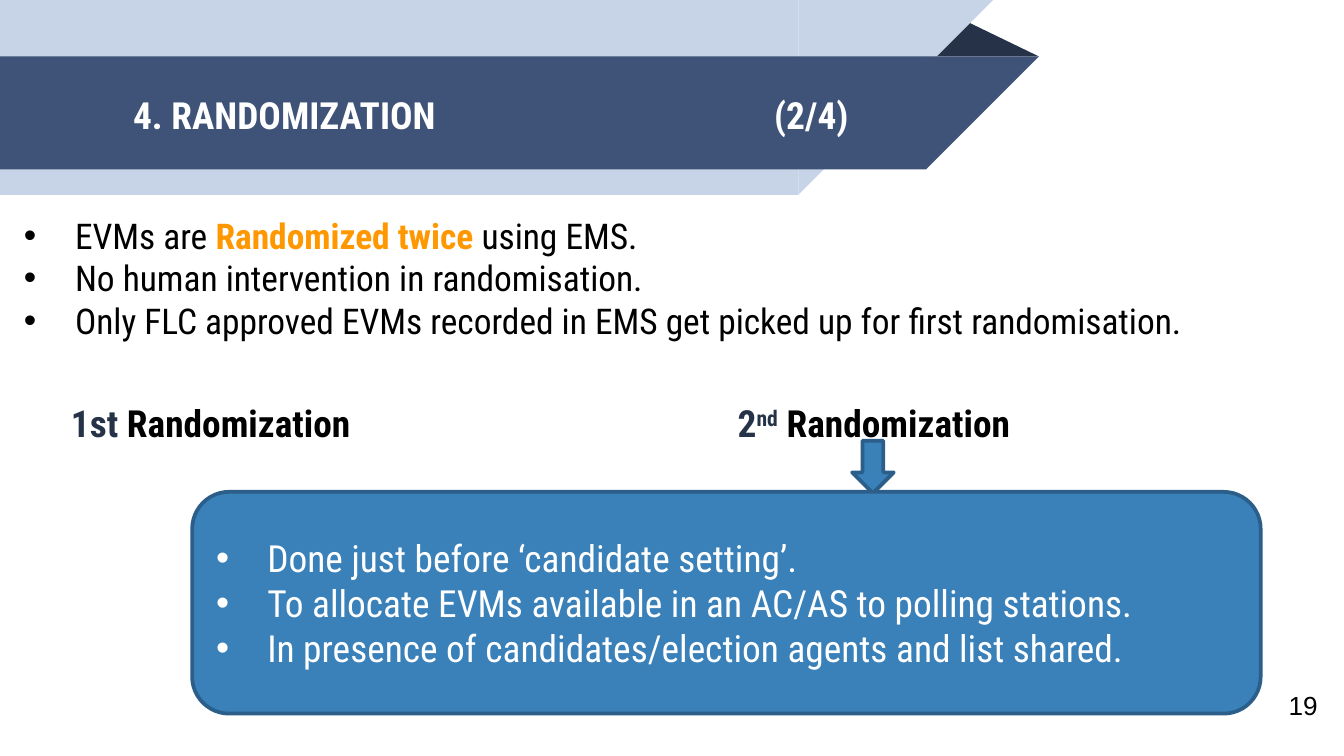
"""Build the second randomization slide with its banner, bullets and callout."""
from dataclasses import dataclass
from typing import Optional

from lxml import etree
from pptx import Presentation
from pptx import util as u
from pptx.dml.color import RGBColor
from pptx.enum import shapes, text
from pptx.oxml.ns import qn

SHAPE = shapes.MSO_SHAPE
ANCHOR = text.MSO_ANCHOR
FONT = "Roboto Condensed"
WHITE, BLACK, NAVY = "FFFFFF", "000000", "263248"
PALE, SLATE, BLUE, EDGE, ORANGE = "C7D3E6", "3F5378", "3A81BA", "2B5F8A", "FF9800"


@dataclass(frozen=True)
class Box:
    """Position and size in inches."""
    x: float
    y: float
    w: float
    h: float

    def emu(self) -> list:
        """Return the four lengths."""
        return [u.Inches(v) for v in (self.x, self.y, self.w, self.h)]


@dataclass(frozen=True)
class Run:
    """Text with its character format."""
    text: str
    color: str = BLACK
    size: float = 20
    bold: bool = False
    font: str = FONT
    raised: bool = False


@dataclass(frozen=True)
class Figure:
    """A filled preset shape."""
    kind: SHAPE
    box: Box
    fill: str
    line: Optional[str] = None
    rotation: float = 0


@dataclass(frozen=True)
class Band:
    """A banner strip that ends in a diagonal."""
    y: float
    w: float
    h: float
    fill: str


BANDS = [Band(0, 5.94, 1.45, PALE), Band(0.42, 6.89, 0.84, SLATE)]
FACTS = [
    [Run("EVMs are ", size=19), Run("Randomized twice ", ORANGE, 19, True),
     Run("using EMS.", size=19)],
    [Run("No human intervention in randomisation.", size=19)],
    [Run("Only FLC approved EVMs recorded in EMS get picked up for first randomisation.",
         size=19)],
]
STEPS = [[Run(t, WHITE)] for t in (
    "Done just before ‘candidate setting’.",
    "To allocate EVMs available in an AC/AS to polling stations.",
    "In presence of candidates/election agents and list shared.",
)]
HEADINGS = [
    (0.43, [Run("1st", NAVY, bold=True), Run(" Randomization", bold=True)]),
    (5.39, [Run("2", NAVY, bold=True), Run("nd", NAVY, bold=True, raised=True),
            Run(" Randomization", bold=True)]),
]


def rgb(value: str) -> RGBColor:
    """Turn a hex string into a colour."""
    return RGBColor.from_string(value)


def add_figure(s, fig: Figure):
    """Draw one preset shape."""
    sp = s.shapes.add_shape(fig.kind, *fig.box.emu())
    sp.shadow.inherit = False
    sp.rotation = fig.rotation
    sp.fill.solid()
    sp.fill.fore_color.rgb = rgb(fig.fill)
    if fig.line:
        sp.line.color.rgb = rgb(fig.line)
        sp.line.width = u.Pt(2)
    else:
        sp.line.fill.background()
    return sp


def add_band(s, band: Band) -> None:
    """Draw a strip and its diagonal end."""
    add_figure(s, Figure(SHAPE.RECTANGLE, Box(0, band.y, band.w, band.h), band.fill))
    end = Box(band.w, band.y, band.h, band.h)
    add_figure(s, Figure(SHAPE.RIGHT_TRIANGLE, end, band.fill, rotation=90))


def add_bullet(p) -> None:
    """Give a paragraph a hanging round bullet."""
    pPr = p._p.get_or_add_pPr()
    pPr.set("marL", str(u.Inches(0.38)))
    pPr.set("indent", str(u.Inches(-0.38)))
    etree.SubElement(pPr, qn("a:buFont")).set("typeface", "Arial")
    etree.SubElement(pPr, qn("a:buChar")).set("char", "•")


def add_tab(p, inches: float) -> None:
    """Set a left tab stop."""
    tabs = etree.SubElement(p._p.get_or_add_pPr(), qn("a:tabLst"))
    tab = etree.SubElement(tabs, qn("a:tab"))
    tab.set("pos", str(u.Inches(inches)))
    tab.set("algn", "l")


def write(sp, paragraphs: list[list[Run]], bullets: bool = False, **frame) -> None:
    """Fill a shape with formatted paragraphs."""
    tf = sp.text_frame
    settings = {"word_wrap": True, "auto_size": text.MSO_AUTO_SIZE.NONE, **frame}
    for name, value in settings.items():
        setattr(tf, name, value)
    for i, runs in enumerate(paragraphs):
        p = tf.add_paragraph() if i else tf.paragraphs[0]
        p.alignment = text.PP_ALIGN.LEFT
        if bullets:
            add_bullet(p)
        for run in runs:
            r = p.add_run()
            r.text = run.text
            style = {"name": run.font, "size": u.Pt(run.size), "bold": run.bold}
            for name, value in style.items():
                setattr(r.font, name, value)
            r.font.color.rgb = rgb(run.color)
            if run.raised:
                r._r.get_or_add_rPr().set("baseline", "30000")


def add_text(s, box: Box, paragraphs: list[list[Run]], **options) -> None:
    """Add a text box."""
    write(s.shapes.add_textbox(*box.emu()), paragraphs, **options)


def add_title(s) -> None:
    """Place the title and its part number over the banner."""
    sp = s.shapes.title
    s.shapes._spTree.append(sp._element)
    sp.left, sp.top, sp.width, sp.height = Box(0.89, 0.43, 5.75, 0.84).emu()
    add_tab(sp.text_frame.paragraphs[0], 4.77)
    write(sp, [[Run("4. RANDOMIZATION\t(2/4)", WHITE, bold=True)]],
          vertical_anchor=ANCHOR.MIDDLE)


def main() -> None:
    """Build and save the slide."""
    prs = Presentation()
    prs.slide_width, prs.slide_height = u.Inches(10), u.Inches(10 * 9 / 16)
    s = prs.slides.add_slide(prs.slide_layouts[5])

    fold = Figure(SHAPE.ISOSCELES_TRIANGLE, Box(6.88, 0.14, 0.85, 0.28), NAVY)
    add_figure(s, fold).adjustments[0] = 0.32
    for band in BANDS:
        add_band(s, band)
    add_title(s)

    add_text(s, Box(9.49, 5.07, 0.51, 0.35), [[Run("19", size=14, font="Arial")]],
             vertical_anchor=ANCHOR.MIDDLE)
    for x, runs in HEADINGS:
        add_text(s, Box(x, 2.98, 2.84, 0.68), [runs], margin_top=0)
    add_text(s, Box(0.08, 1.54, 9.75, 1.38), FACTS, bullets=True)

    add_figure(s, Figure(SHAPE.DOWN_ARROW, Box(6.34, 3.28, 0.31, 0.39), BLUE, EDGE))
    callout = Figure(SHAPE.ROUNDED_RECTANGLE, Box(1.43, 3.66, 7.95, 1.65), BLUE, EDGE)
    write(add_figure(s, callout), STEPS, bullets=True, vertical_anchor=ANCHOR.MIDDLE)
    prs.save("out.pptx")


if __name__ == "__main__":
    main()
